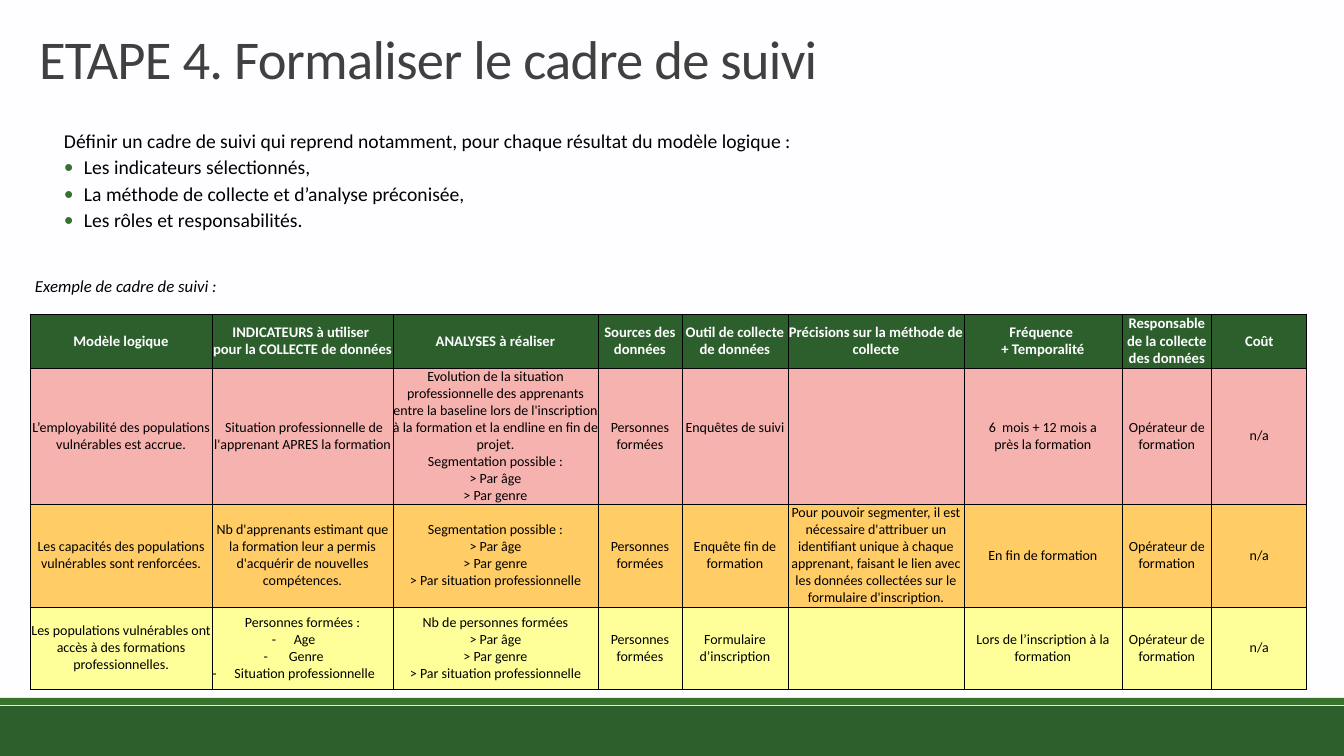
from lxml import etree
from pptx import Presentation
from pptx.dml.color import RGBColor
from pptx.enum.shapes import MSO_SHAPE
from pptx.enum.text import MSO_ANCHOR, PP_ALIGN
from pptx.oxml.ns import qn
from pptx.util import Emu, Pt

RECTANGLE = MSO_SHAPE.RECTANGLE
TOP, MIDDLE, BOTTOM = MSO_ANCHOR.TOP, MSO_ANCHOR.MIDDLE, MSO_ANCHOR.BOTTOM
LEFT, CENTER = PP_ALIGN.LEFT, PP_ALIGN.CENTER

EMU_PER_PX = 914400 / 100.8
FONT = "Calibri"
COLORS = {
    "paper": "FEFDFF", "title": "404040", "ink": "000000",
    "forest": "2D5F2D", "leaf": "38732E",
    "impact": "F6B2AF", "outcome": "FFCC66", "output": "FFFF99",
}

INTRO = "Définir un cadre de suivi qui reprend notamment, pour chaque résultat du modèle logique :"
FRAMEWORK_ITEMS = [
    "Les indicateurs sélectionnés,",
    "La méthode de collecte et d’analyse préconisée,",
    "Les rôles et responsabilités.",
]

# Table content: \n starts a paragraph, \v breaks a line
COLUMN_WIDTHS = [182, 181, 205, 84, 106, 176, 158, 90, 95]
HEADERS = [
    "Modèle logique",
    "INDICATEURS à utiliser \vpour la COLLECTE de données",
    "ANALYSES à réaliser",
    "Sources des données",
    "Outil de collecte de données",
    "Précisions sur la méthode de collecte",
    "Fréquence \v+ Temporalité",
    "Responsable de la collecte des données",
    "Coût",
]
SOURCE, OPERATOR, COST = "Personnes formées", "Opérateur de formation", "n/a"
BY_AGE_GENDER = "\n> Par âge\n> Par genre"
BY_ALL = BY_AGE_GENDER + "\n> Par situation professionnelle"
TABLE_ROWS = [
    (54, "forest", HEADERS),
    (136, "impact", [
        "L’employabilité des populations vulnérables est accrue.",
        " Situation professionnelle de l'apprenant APRES la formation",
        "Evolution de la situation professionnelle des apprenants entre la baseline lors de "
        "l'inscription à la formation et la endline en fin de projet.\n"
        "Segmentation possible :" + BY_AGE_GENDER,
        SOURCE, "Enquêtes de suivi", "",
        "6  mois + 12 mois a\vprès la formation", OPERATOR, COST]),
    (103, "outcome", [
        "Les capacités des populations vulnérables sont renforcées.",
        "Nb d'apprenants estimant que la formation leur a permis d'acquérir de nouvelles "
        "compétences.",
        "Segmentation possible :" + BY_ALL,
        SOURCE, "Enquête fin de formation",
        "Pour pouvoir segmenter, il est nécessaire d'attribuer un identifiant unique à chaque "
        "apprenant, faisant le lien avec les données collectées sur le formulaire d'inscription.",
        "En fin de formation", OPERATOR, COST]),
    (82, "output", [
        "Les populations vulnérables ont accès à des formations professionnelles.",
        "Personnes formées :\nAge\n Genre\nSituation professionnelle",
        "Nb de personnes formées" + BY_ALL,
        SOURCE, "Formulaire d’inscription", "",
        "Lors de l’inscription à la formation", OPERATOR, COST]),
]


def px(length):
    return Emu(round(length * EMU_PER_PX))


def rgb(name):
    return RGBColor.from_string(COLORS[name])


def set_font(paragraph, size, color, bold=False, italic=False):
    font = paragraph.font
    font.name, font.size = FONT, Pt(size)
    font.bold, font.italic = bold, italic
    font.color.rgb = rgb(color)


def set_bullet(paragraph, mark, margin, hanging, color):
    properties = paragraph._p.get_or_add_pPr()
    properties.set("marL", str(px(margin)))
    properties.set("indent", str(-px(hanging)))
    bullet_color = etree.Element(qn("a:buClr"))
    etree.SubElement(bullet_color, qn("a:srgbClr"), val=COLORS[color])
    bullet_font = etree.Element(qn("a:buFont"), typeface=FONT)
    bullet_mark = etree.Element(qn("a:buChar"), char=mark)
    # Bullets come after spacing and before the default run properties
    defaults = properties.find(qn("a:defRPr"))
    for part in (bullet_color, bullet_font, bullet_mark):
        defaults.addprevious(part)


def add_block(slide, box, color):
    block = slide.shapes.add_shape(RECTANGLE, *map(px, box))
    block.shadow.inherit = False
    block.fill.solid()
    block.fill.fore_color.rgb = rgb(color)
    block.line.fill.background()
    return block


def write_text(shape, lines, size, color, inset=0, anchor=TOP, italic=False):
    frame = shape.text_frame
    frame.word_wrap = True
    frame.vertical_anchor = anchor
    frame.margin_left = frame.margin_right = px(inset)
    frame.margin_top = frame.margin_bottom = px(5)
    frame.text = "\n".join(lines)
    for paragraph in frame.paragraphs:
        paragraph.alignment = LEFT
        set_font(paragraph, size, color, italic=italic)
    return frame.paragraphs


def set_borders(cell):
    properties = cell._tc.get_or_add_tcPr()
    for position, side in enumerate(("lnL", "lnR", "lnT", "lnB")):
        border = etree.Element(qn("a:" + side), w=str(Pt(0.5)))
        fill = etree.SubElement(border, qn("a:solidFill"))
        etree.SubElement(fill, qn("a:srgbClr"), val=COLORS["ink"])
        properties.insert(position, border)


def fill_cell(cell, text, color, header):
    cell.margin_left = cell.margin_right = cell.margin_top = cell.margin_bottom = 0
    cell.vertical_anchor = MIDDLE
    cell.fill.solid()
    cell.fill.fore_color.rgb = rgb(color)
    set_borders(cell)
    cell.text = text
    for paragraph in cell.text_frame.paragraphs:
        paragraph.alignment = CENTER
        if header:
            set_font(paragraph, 10.5, "paper", bold=True)
        else:
            set_font(paragraph, 10, "ink")


def add_framework_table(slide):
    heights = [height for height, _, _ in TABLE_ROWS]
    table = slide.shapes.add_table(
        len(TABLE_ROWS), len(COLUMN_WIDTHS), px(30), px(314),
        px(sum(COLUMN_WIDTHS)), px(sum(heights))).table
    for column, width in zip(table.columns, COLUMN_WIDTHS):
        column.width = px(width)
    for index, (height, color, texts) in enumerate(TABLE_ROWS):
        table.rows[index].height = px(height)
        for cell, text in zip(table.rows[index].cells, texts):
            fill_cell(cell, text, color, header=index == 0)
    # The survey tool sits half a line above the middle
    table.cell(1, 4).margin_bottom = px(17)
    for detail in table.cell(3, 1).text_frame.paragraphs[1:]:
        set_bullet(detail, "-", 0, 22, "ink")


def main():
    prs = Presentation()
    prs.slide_width, prs.slide_height = px(1344), px(756)
    slide = prs.slides.add_slide(prs.slide_layouts[6])
    slide.background.fill.solid()
    slide.background.fill.fore_color.rgb = rgb("paper")

    # Footer bands
    add_block(slide, (0, 706, 1344, 50), "forest")
    add_block(slide, (0, 698, 1344, 7), "leaf")

    # Title
    heading = slide.shapes.add_textbox(px(29), px(18), px(1284), px(78))
    title, = write_text(heading, ["ETAPE 4. Formaliser le cadre de suivi"],
                        39, "title", inset=10, anchor=BOTTOM)
    title.line_spacing = 0.85
    title.runs[0].font._element.set("spc", "-50")

    # Introduction and its list
    intro_panel = add_block(slide, (64, 124, 843, 116), "paper")
    intro = write_text(intro_panel, [INTRO] + FRAMEWORK_ITEMS, 14, "ink")
    for paragraph in intro:
        paragraph.space_after = Pt(2)
    for item in intro[1:]:
        set_bullet(item, "•", 20, 20, "leaf")

    # Example
    add_framework_table(slide)
    caption_panel = add_block(slide, (35, 271, 843, 32), "paper")
    write_text(caption_panel, ["Exemple de cadre de suivi :"], 12, "ink", italic=True)

    prs.save("out.pptx")


if __name__ == "__main__":
    main()
